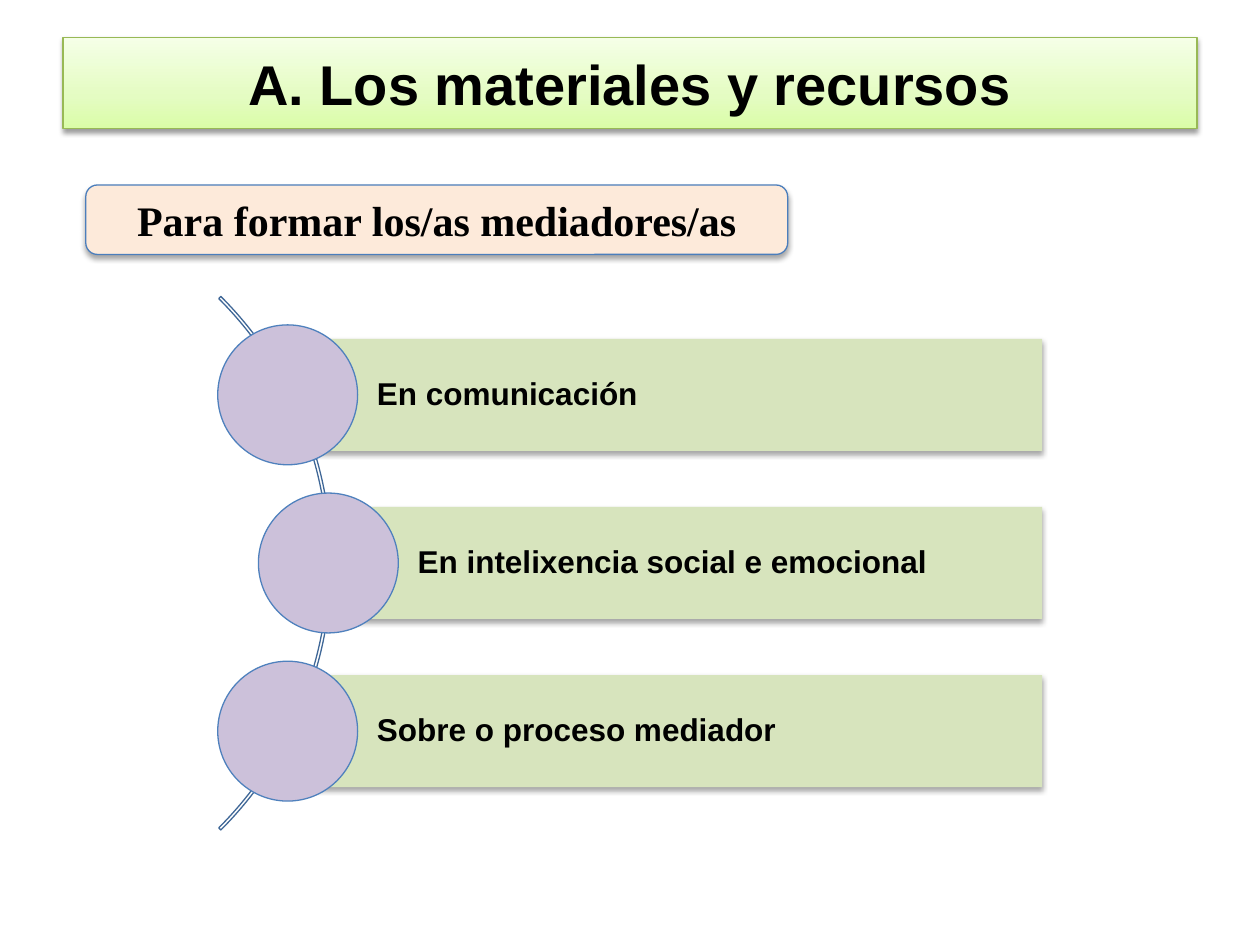
import copy
import dataclasses

import lxml.etree
import pptx
import pptx.dml.color
import pptx.enum.shapes
import pptx.enum.text
import pptx.oxml.ns
import pptx.util

Cm = pptx.util.Cm
Pt = pptx.util.Pt
Kind = pptx.enum.shapes.MSO_SHAPE
Align = pptx.enum.text.PP_ALIGN
qn = pptx.oxml.ns.qn

COLOURS = {
    "text": "000000", "shadow": "000000",
    "title_low": "DAFDA7", "title_mid": "E4FCC2", "title_high": "F5FFE7",
    "title_line": "98B955", "subtitle": "FDEADA", "subtitle_line": "4B7EBC",
    "arc_line": "3F6797", "bar": "D7E4BD", "circle": "CCC1DA", "circle_line": "4F81BD",
}
ROW_TOP, ROW_STEP = 7.96, 3.39
BAR_RIGHT, BAR_HEIGHT, DIAMETER = 21.01, 2.26, 2.82


@dataclasses.dataclass
class Row:
    text: str
    centre_x: float


ROWS = [
    Row("En comunicación", 5.8),
    Row("En intelixencia social e emocional", 6.62),
    Row("Sobre o proceso mediador", 5.8),
]


def colour(name: str) -> pptx.dml.color.RGBColor:
    return pptx.dml.color.RGBColor.from_string(COLOURS[name])


def add_box(page, kind, left: float, top: float, width: float, height: float,
            fill: str = "", line: str = ""):
    box = page.shapes.add_shape(kind, Cm(left), Cm(top), Cm(width), Cm(height))
    box.shadow.inherit = False
    if fill:
        box.fill.solid()
        box.fill.fore_color.rgb = colour(fill)
    else:
        box.fill.background()
    if line:
        box.line.color.rgb = colour(line)
        box.line.width = Pt(0.75)
    else:
        box.line.fill.background()
    return box


def add_shadow(box, distance: float, opacity: int) -> None:
    effects = box._element.spPr.find(qn("a:effectLst"))
    shadow = lxml.etree.SubElement(
        effects, qn("a:outerShdw"), blurRad=str(Pt(3.1)), dist=str(Pt(distance)),
        dir="5400000", rotWithShape="0")
    tint = lxml.etree.SubElement(shadow, qn("a:srgbClr"), val=COLOURS["shadow"])
    lxml.etree.SubElement(tint, qn("a:alpha"), val=str(opacity * 1000))


def shade_title(box) -> None:
    box.fill.gradient()
    box.fill.gradient_angle = 90
    first = box._element.spPr.find(".//" + qn("a:gs"))
    first.addnext(copy.deepcopy(first))
    names = ("title_low", "title_mid", "title_high")
    for stop, name, position in zip(box.fill.gradient_stops, names, (0, 0.35, 1)):
        stop.color.rgb = colour(name)
        stop.position = position


def write(box, text: str, font: str, size: int, align=Align.CENTER):
    frame = box.text_frame
    frame.word_wrap = True
    frame.vertical_anchor = pptx.enum.text.MSO_ANCHOR.MIDDLE
    para = frame.paragraphs[0]
    para.alignment = align
    span = para.add_run()
    span.text = text
    span.font.name = font
    span.font.size = Pt(size)
    span.font.bold = True
    span.font.color.rgb = colour("text")
    return para


def add_row(page, row: Row, centre_y: float) -> None:
    bar = add_box(page, Kind.RECTANGLE, row.centre_x, centre_y - BAR_HEIGHT / 2,
                  BAR_RIGHT - row.centre_x, BAR_HEIGHT, "bar")
    add_shadow(bar, 1.8, 35)
    para = write(bar, row.text, "Arial", 18, Align.JUSTIFY)
    para.line_spacing = 0.9
    bar.text_frame.margin_left = Cm(1.8)
    add_box(page, Kind.OVAL, row.centre_x - DIAMETER / 2, centre_y - DIAMETER / 2,
            DIAMETER, DIAMETER, "circle", "circle_line")


def main() -> None:
    """Build the slide on materials and resources for training mediators."""
    deck = pptx.Presentation()
    deck.slide_width, deck.slide_height = Cm(25.4), Cm(19.05)
    page = deck.slides.add_slide(deck.slide_layouts[6])

    title = add_box(page, Kind.RECTANGLE, 1.27, 0.76, 22.86, 1.83, line="title_line")
    shade_title(title)
    add_shadow(title, 1.6, 38)
    write(title, "A. Los materiales y recursos", "Arial", 32)

    subtitle = add_box(page, Kind.ROUNDED_RECTANGLE, 1.73, 3.73, 14.15, 1.4,
                       "subtitle", "subtitle_line")
    add_shadow(subtitle, 1.8, 35)
    write(subtitle, "Para formar los/as mediadores/as", "Times New Roman", 24)

    arc = add_box(page, Kind.BLOCK_ARC, -8.53, 3.75, 15.21, 15.21, line="arc_line")
    for index, value in enumerate((189, 27, 0.004)):
        arc.adjustments[index] = value

    for index, row in enumerate(ROWS):
        add_row(page, row, ROW_TOP + index * ROW_STEP)
    deck.save("out.pptx")


if __name__ == "__main__":
    main()
